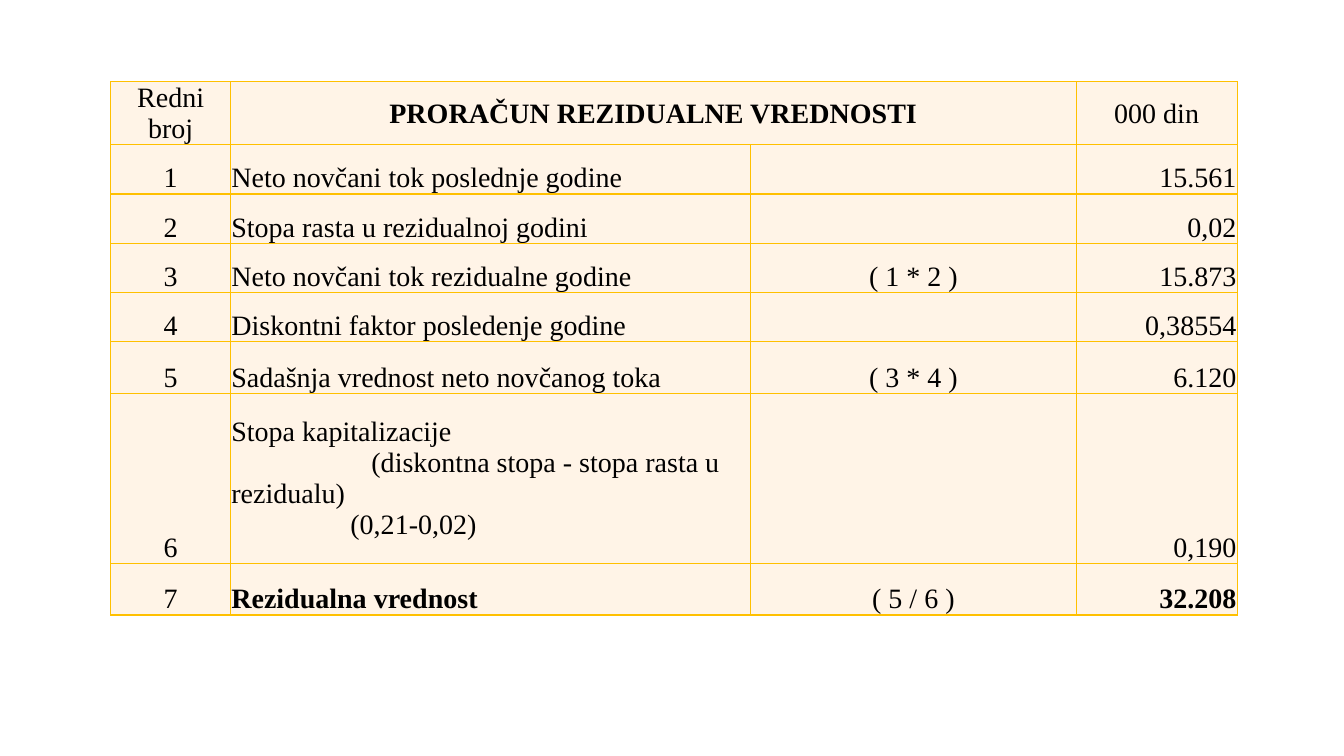
from lxml.etree import SubElement
from pptx import Presentation
from pptx.dml.color import RGBColor
from pptx.enum.text import MSO_ANCHOR, PP_ALIGN
from pptx.oxml.ns import qn
from pptx.util import Cm, Pt

COLOURS = {"text": "000000", "border": "FFC000", "cell": "FFF4E7"}
COLUMN_WIDTHS = [3.02, 13.11, 8.2, 4.06]
ROW_HEIGHTS = [1.57, 1.24, 1.24, 1.24, 1.24, 1.3, 4.29, 1.3]
ALIGNMENTS = [PP_ALIGN.CENTER, PP_ALIGN.LEFT, PP_ALIGN.CENTER, PP_ALIGN.RIGHT]

HEADINGS = ["Redni broj", "PRORAČUN REZIDUALNE VREDNOSTI", "", "000 din"]
CAPITALISATION = [
    "Stopa kapitalizacije",
    "(diskontna stopa - stopa rasta u rezidualu)",
    "(0,21-0,02)",
]
CAPITALISATION_INDENTS = [0, 3.53, 3]
ITEMS = [
    ("Neto novčani tok poslednje godine", "", "15.561"),
    ("Stopa rasta u rezidualnoj godini", "", "0,02"),
    ("Neto novčani tok rezidualne godine", "( 1 * 2 )", "15.873"),
    ("Diskontni faktor posledenje godine", "", "0,38554"),
    ("Sadašnja vrednost neto novčanog toka", "( 3 * 4 )", "6.120"),
    ("\n".join(CAPITALISATION), "", "0,190"),
    ("Rezidualna vrednost", "( 5 / 6 )", "32.208"),
]


class SlideBuilder:
    """Holds the text style and the current slide."""

    font_format = {"name": "Times New Roman", "size": Pt(20), "bold": False}
    cell_format = {
        "margin_left": Cm(0.02),
        "margin_right": Cm(0.02),
        "margin_top": Cm(0.02),
        "margin_bottom": 0,
        "vertical_anchor": MSO_ANCHOR.BOTTOM,
    }

    def __init__(self, deck):
        self.page = deck.slides.add_slide(deck.slide_layouts[6])

    def table(self, left, top, widths, heights):
        frame = self.page.shapes.add_table(
            len(heights), len(widths), Cm(left), Cm(top),
            Cm(sum(widths)), Cm(sum(heights)))
        table = frame.table
        table.first_row = table.horz_banding = False
        for column, width in zip(table.columns, widths):
            column.width = Cm(width)
        for row, height in zip(table.rows, heights):
            row.height = Cm(height)
        return table

    def borders(self, cell):
        properties = cell._tc.get_or_add_tcPr()
        for side in ("lnL", "lnR", "lnT", "lnB"):
            line = SubElement(properties, qn(f"a:{side}"), w=str(Pt(1)))
            fill = SubElement(line, qn("a:solidFill"))
            SubElement(fill, qn("a:srgbClr"), val=COLOURS["border"])

    def cell(self, cell, text, alignment, **changes):
        self.borders(cell)
        cell.fill.solid()
        cell.fill.fore_color.rgb = RGBColor.from_string(COLOURS["cell"])
        bold = changes.pop("bold", False)
        for name, value in {**self.cell_format, **changes}.items():
            setattr(cell, name, value)
        cell.text = text
        for para in cell.text_frame.paragraphs:
            para.alignment = alignment
            for name, value in {**self.font_format, "bold": bold}.items():
                setattr(para.font, name, value)
            para.font.color.rgb = RGBColor.from_string(COLOURS["text"])

    def first_line_indents(self, cell, indents):
        for para, indent in zip(cell.text_frame.paragraphs, indents):
            properties = para._p.get_or_add_pPr()
            properties.set("marL", "0")
            properties.set("indent", str(Cm(indent)))


def main():
    deck = Presentation()
    deck.slide_width, deck.slide_height = Cm(33.87), Cm(19.05)
    builder = SlideBuilder(deck)
    table = builder.table(2.79, 2.06, COLUMN_WIDTHS, ROW_HEIGHTS)

    # Heading row
    for column, heading in enumerate(HEADINGS):
        builder.cell(table.cell(0, column), heading, PP_ALIGN.CENTER,
                     vertical_anchor=MSO_ANCHOR.MIDDLE, bold=column == 1)
    table.cell(0, 1).merge(table.cell(0, 2))

    # Numbered calculation rows, with the result in bold
    for number, item in enumerate(ITEMS, start=1):
        for column, text in enumerate((str(number), *item)):
            is_result = number == len(ITEMS) and column in (1, 3)
            builder.cell(table.cell(number, column), text,
                         ALIGNMENTS[column], bold=is_result)

    # Capitalisation rate, explained over several lines
    rate_cell = table.cell(6, 1)
    rate_cell.vertical_anchor = MSO_ANCHOR.MIDDLE
    builder.first_line_indents(rate_cell, CAPITALISATION_INDENTS)

    deck.save("out.pptx")


if __name__ == "__main__":
    main()
